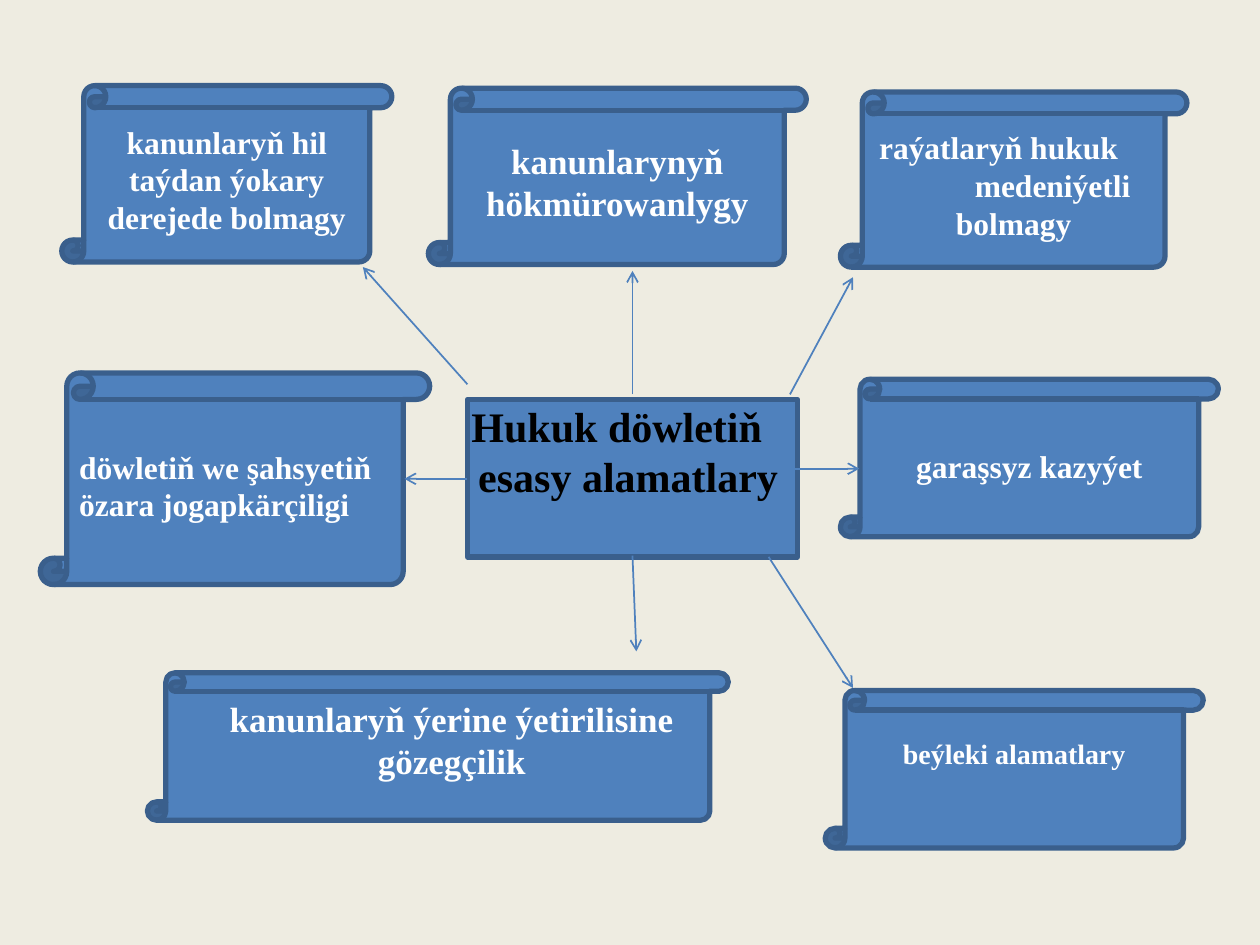
from lxml import etree
from pptx import Presentation
from pptx.dml.color import RGBColor
from pptx.enum import shapes, text
from pptx.oxml.ns import qn
from pptx.util import Inches, Pt

COLORS = {"paper": "EEECE1", "scroll": "4F81BD", "edge": "3A5F8C",
          "light": "FFFFFF", "dark": "000000"}
CENTER, LEFT = text.PP_ALIGN.CENTER, text.PP_ALIGN.LEFT
MIDDLE, TOP = text.MSO_ANCHOR.MIDDLE, text.MSO_ANCHOR.TOP

deck = Presentation()
deck.slide_width, deck.slide_height = Inches(10), Inches(7.5)
slide = deck.slides.add_slide(deck.slide_layouts[6])
slide.background.fill.solid()
slide.background.fill.fore_color.rgb = RGBColor.from_string(COLORS["paper"])

# Grid of 100 columns by 75 rows
column, row = deck.slide_width / 100, deck.slide_height / 75


def place(*cells):
    """Turn alternating columns and rows into slide lengths."""
    return [round(cell * unit) for cell, unit in zip(cells, (column, row) * 2)]


def write(frame, lines, size, color="light", anchor=MIDDLE, align=CENTER, spacing=None):
    """Write lines of (wording, left indent, right indent), indents in columns."""
    for name, value in {"word_wrap": True, "vertical_anchor": anchor}.items():
        setattr(frame, name, value)
    for number, (wording, left, right) in enumerate(lines):
        paragraph = frame.add_paragraph() if number else frame.paragraphs[0]
        properties = paragraph._p.get_or_add_pPr()
        properties.set("marL", str(round(left * column)))
        properties.set("marR", str(round(right * column)))
        for name, value in {"alignment": align, "line_spacing": spacing}.items():
            setattr(paragraph, name, value)
        run = paragraph.add_run()
        run.text = wording
        for name, value in {"name": "Times New Roman", "size": Pt(size), "bold": True}.items():
            setattr(run.font, name, value)
        run.font.color.rgb = RGBColor.from_string(COLORS[color])


# Central panel and the scrolls around it: cells, lines, size, format
SCROLL, PANEL = shapes.MSO_SHAPE.VERTICAL_SCROLL, shapes.MSO_SHAPE.RECTANGLE
features = [
    (PANEL, (37.1, 31.7, 26.2, 12.5), [], 18, {}),
    (SCROLL, (4.9, 6.8, 26.2, 14),
     [("kanunlaryň hil taýdan ýokary derejede bolmagy", 0, 0)], 18, {}),
    (SCROLL, (34, 7, 30, 14), [("kanunlarynyň hökmürowanlygy", 0, 0)], 20, {}),
    (SCROLL, (66.7, 7.3, 27.5, 13.9),
     [("raýatlaryň hukuk", 0, 2.4), ("medeniýetli", 6.2, 0), ("bolmagy", 0, 0)], 18, {}),
    (SCROLL, (3.2, 29.6, 30.9, 16.8),
     [("döwletiň we şahsyetiň özara jogapkärçiligi", 0, 0)], 18, {"align": LEFT}),
    (SCROLL, (66.7, 30.1, 30, 12.5), [("garaşsyz kazyýet", 0, 0)], 18, {"spacing": 1.15}),
    (SCROLL, (11.7, 53.4, 46.1, 11.7), [], 20, {}),
    (SCROLL, (65.5, 54.8, 30, 12.5), [("beýleki alamatlary", 0, 0)], 16, {"spacing": 1.15}),
]
for outline, cells, lines, size, layout in features:
    feature = slide.shapes.add_shape(outline, *place(*cells))
    feature.shadow.inherit = False
    feature.fill.solid()
    feature.fill.fore_color.rgb = RGBColor.from_string(COLORS["scroll"])
    feature.line.color.rgb = RGBColor.from_string(COLORS["edge"])
    feature.line.width = Pt(3)
    write(feature.text_frame, lines, size, **layout)
# The last scroll carries its wording above the middle
feature.text_frame.margin_bottom = round(4.2 * row)

# Wording laid over the bottom scroll and the central panel
captions = [
    ((13.4, 54.9, 44.9, 7.7),
     [("kanunlaryň ýerine ýetirilisine gözegçilik", 0, 0)], 20, "light"),
    ((35.5, 31.3, 28.7, 9.1),
     [("Hukuk döwletiň", 0, 1.8), ("esasy alamatlary", 0, 0)], 24, "dark"),
]
for cells, lines, size, color in captions:
    caption = slide.shapes.add_textbox(*place(*cells))
    write(caption.text_frame, lines, size, color, TOP)

# Arrows from the centre out to each feature
arrows = [
    (37.1, 30.5, 28.8, 21.2),
    (50.2, 31.3, 50.2, 21.5),
    (50.2, 44.1, 50.5, 51.7),
    (62.7, 31.3, 67.7, 22),
    (63, 37.2, 68.2, 37.2),
    (37.1, 38, 32.1, 38),
    (61, 44.2, 67.7, 54.6),
]
for ends in arrows:
    arrow = slide.shapes.add_connector(shapes.MSO_CONNECTOR.STRAIGHT, *place(*ends))
    arrow.line.color.rgb = RGBColor.from_string(COLORS["scroll"])
    arrow.line.width = Pt(1)
    etree.SubElement(arrow.line._get_or_add_ln(), qn("a:tailEnd"), type="arrow")
    etree.SubElement(arrow._element.spPr, qn("a:effectLst"))

deck.save("out.pptx")
